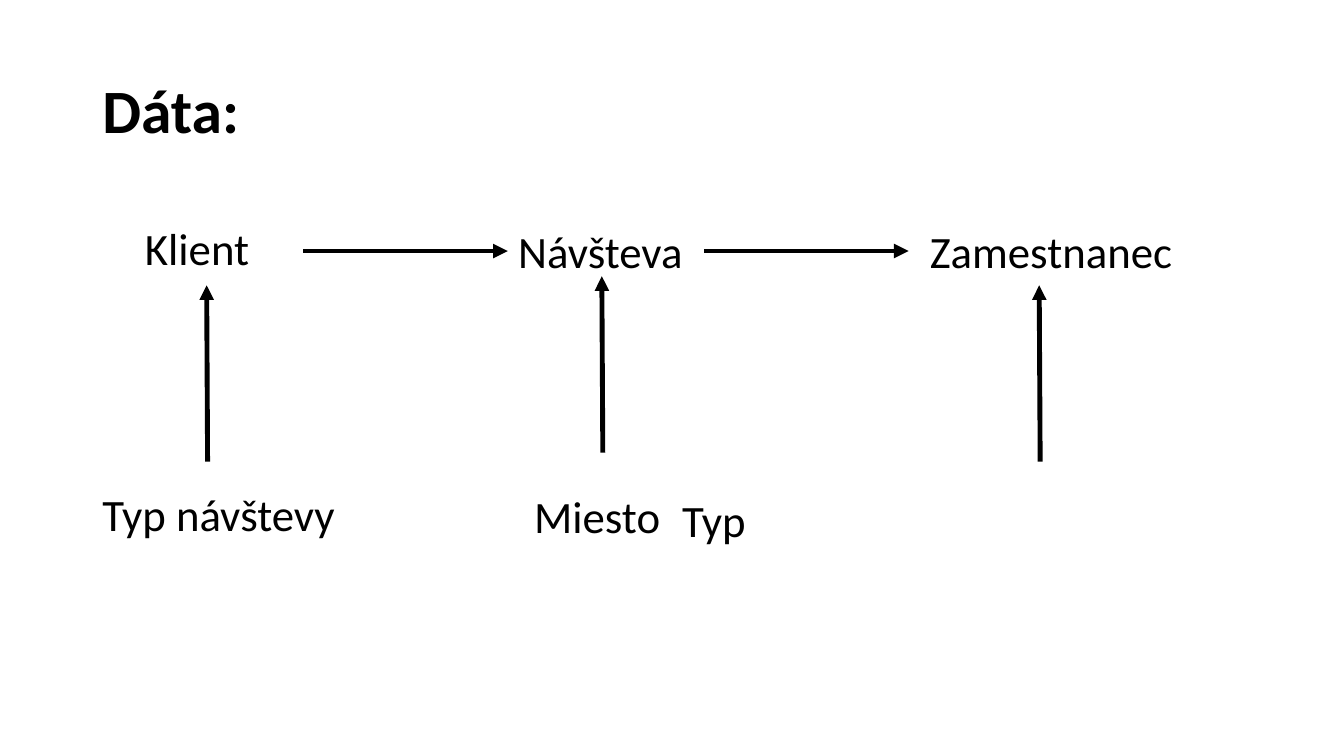
from collections import namedtuple
from dataclasses import dataclass

from lxml import etree
from pptx import Presentation
from pptx.dml.color import RGBColor
from pptx.enum.shapes import MSO_CONNECTOR
from pptx.enum.text import MSO_ANCHOR, MSO_AUTO_SIZE
from pptx.oxml.ns import qn
from pptx.util import Pt

STRAIGHT = MSO_CONNECTOR.STRAIGHT
TOP, MIDDLE = MSO_ANCHOR.TOP, MSO_ANCHOR.MIDDLE
FIXED, GROW = MSO_AUTO_SIZE.NONE, MSO_AUTO_SIZE.SHAPE_TO_FIT_TEXT

Box = namedtuple("Box", "left top width height")


@dataclass(frozen=True)
class Theme:
    font: str = "Calibri"
    ink: RGBColor = RGBColor(0, 0, 0)
    paper: RGBColor = RGBColor(255, 255, 255)
    title_size: int = 44
    label_size: int = 32
    arrow_width: float = 3.5


THEME = Theme()
TITLE_BOX = Box(66, 28.8, 828, 104.4)
DIAGRAM_BOX = Box(66, 156.2, 858.5, 345)

# Label text and its place within the diagram
MAIN_LABEL = ("Klient", Box(30.5, 2.2, 828, 342.7))
LABELS = [
    ("Návšteva", Box(297, 0, 140.4, 67.7)),
    ("Zamestnanec", Box(591.2, 0, 189.4, 67.7)),
    ("Typ návštevy", Box(0, 188, 187.2, 87.1)),
    ("Miesto", Box(308.4, 189.4, 105.8, 85.7)),
    ("Typ", Box(414.2, 192.3, 60.5, 85.7)),
]

ACROSS_Y, ACROSS_LENGTH = 23.1, 146
ACROSS_STARTS = [150.7, 437]
UP_LENGTH, UP_LEAN = 126, 0.7
UP_STARTS = [(82.3, 173.6), (364.6, 167.1), (677, 173.6)]


def add_text(page, box, text, size, bold=False, spacing=1.0, frame_format=None):
    frame = page.shapes.add_textbox(*map(Pt, box)).text_frame
    for name, value in (frame_format or {}).items():
        setattr(frame, name, value)
    para = frame.paragraphs[0]
    para.line_spacing = spacing
    span = para.add_run()
    span.text = text
    font_format = {"name": THEME.font, "size": Pt(size), "bold": bold}
    for name, value in font_format.items():
        setattr(span.font, name, value)
    span.font.color.rgb = THEME.ink


def add_arrow(page, start, end):
    arrow = page.shapes.add_connector(STRAIGHT, *map(Pt, (*start, *end)))
    arrow.line.color.rgb = THEME.ink
    arrow.line.width = Pt(THEME.arrow_width)
    etree.SubElement(arrow.line._get_or_add_ln(), qn("a:tailEnd"), type="triangle")
    etree.SubElement(arrow._element.spPr, qn("a:effectLst"))


def add_title(page, box):
    add_text(page, box, "Dáta:", THEME.title_size, bold=True, spacing=0.9,
             frame_format={"word_wrap": True, "auto_size": FIXED,
                           "vertical_anchor": MIDDLE})


def add_diagram(page, box):
    def inside(part):
        return part._replace(left=box.left + part.left, top=box.top + part.top)

    text, part = MAIN_LABEL
    add_text(page, inside(part), text, THEME.label_size, spacing=0.9,
             frame_format={"word_wrap": True, "auto_size": FIXED,
                           "vertical_anchor": TOP})
    for text, part in LABELS:
        add_text(page, inside(part), text, THEME.label_size,
                 frame_format={"word_wrap": False, "auto_size": GROW,
                               "vertical_anchor": TOP})

    y = box.top + ACROSS_Y
    for offset in ACROSS_STARTS:
        x = box.left + offset
        add_arrow(page, (x, y), (x + ACROSS_LENGTH, y))
    for across, down in UP_STARTS:
        x, y = box.left + across, box.top + down
        add_arrow(page, (x, y), (x - UP_LEAN, y - UP_LENGTH))


def main():
    deck = Presentation()
    deck.slide_width, deck.slide_height = Pt(960), Pt(540)
    page = deck.slides.add_slide(deck.slide_layouts[6])
    page.background.fill.solid()
    page.background.fill.fore_color.rgb = THEME.paper
    add_title(page, TITLE_BOX)
    add_diagram(page, DIAGRAM_BOX)
    deck.save("out.pptx")


if __name__ == "__main__":
    main()
